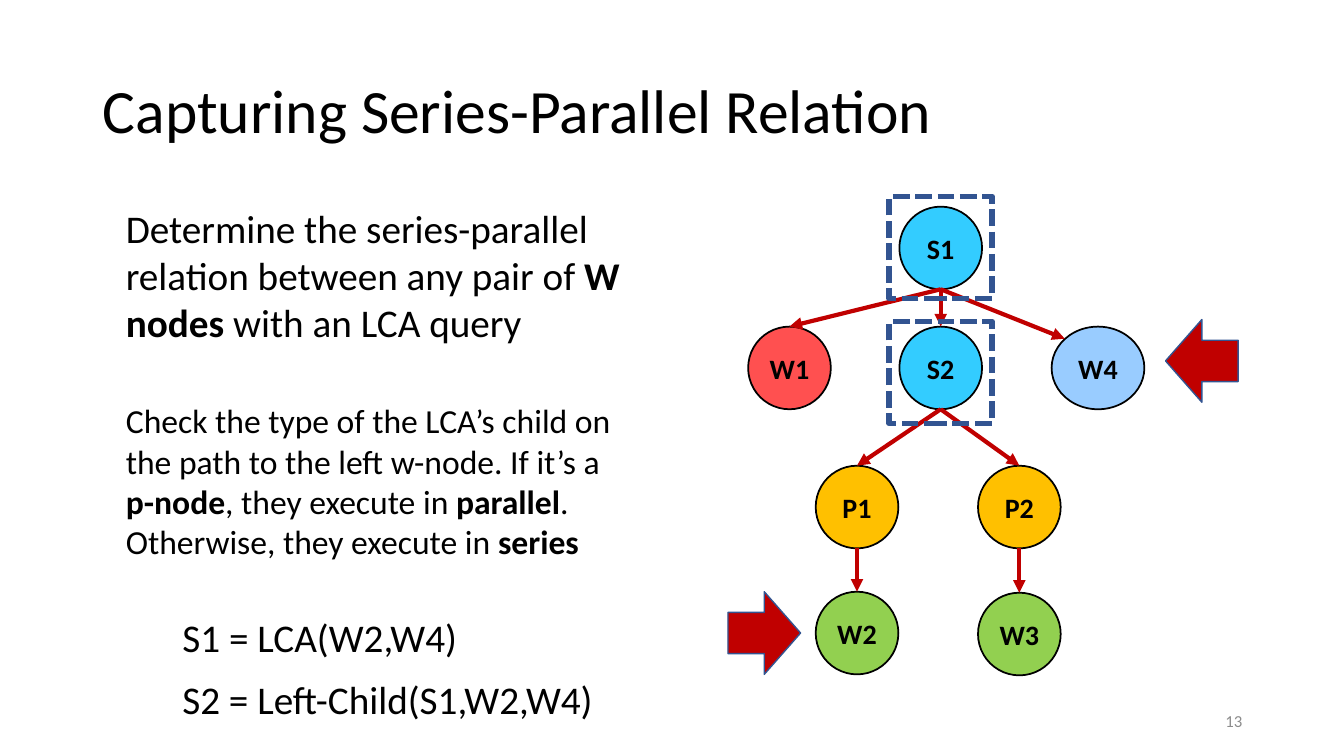
from pptx import Presentation
from pptx.dml.color import RGBColor
from pptx.enum.dml import MSO_LINE
from pptx.enum.shapes import MSO_CONNECTOR, MSO_SHAPE
from pptx.enum.text import MSO_ANCHOR, PP_ALIGN
from pptx.oxml.ns import qn
from pptx.util import Emu, Pt
from lxml.etree import SubElement

SCALE = 9144
FONT = "Calibri"
BLACK = RGBColor(0x00, 0x00, 0x00)
GRAY = RGBColor(0x8C, 0x8C, 0x8C)
RED = RGBColor(0xFF, 0x50, 0x50)
DARK_RED = RGBColor(0xC0, 0x00, 0x00)
GREEN = RGBColor(0x92, 0xD0, 0x50)
ORANGE = RGBColor(0xFF, 0xC0, 0x00)
CYAN = RGBColor(0x33, 0xCC, 0xFF)
PALE_BLUE = RGBColor(0x99, 0xCC, 0xFF)
NAVY = RGBColor(0x32, 0x54, 0x91)

NODE = 82
NODES = {
    "W1": (742, 324, NODE, RED),
    "W3": (970, 588, NODE, GREEN),
    "W2": (809, 587, NODE, GREEN),
    "W4": (1043, 324, 92, PALE_BLUE),
    "P1": (809, 462, NODE, ORANGE),
    "S1": (892, 205, NODE, CYAN),
    "P2": (970, 462, NODE, ORANGE),
    "S2": (892, 324, NODE, CYAN),
}
EDGES = [("P1", "W2"), ("P2", "W3"), ("S2", "P1"), ("S2", "P2"),
         ("S1", "W1"), ("S1", "S2")]
W4_UPPER_LEFT = (1056, 336)


def px(*values):
    return [Emu(v * SCALE) for v in values]


def style(p, size, color=BLACK, bold=None, align=PP_ALIGN.LEFT):
    p.alignment = align
    f = p.font
    f.name, f.size, f.bold = FONT, Pt(size), bold
    f.color.rgb = color


def add_title(s, text):
    title = s.shapes.title
    title.left, title.top, title.width, title.height = px(92, 40, 1150, 145)
    tf = title.text_frame
    tf.text = text
    tf.vertical_anchor = MSO_ANCHOR.MIDDLE
    p = tf.paragraphs[0]
    p.line_spacing = 0.9
    style(p, 44)


def add_text(s, box, paragraphs, size, color=BLACK, align=PP_ALIGN.LEFT,
             anchor=MSO_ANCHOR.TOP):
    tf = s.shapes.add_textbox(*px(*box)).text_frame
    tf.word_wrap = True
    tf.vertical_anchor = anchor
    for i, runs in enumerate(paragraphs):
        p = tf.add_paragraph() if i else tf.paragraphs[0]
        style(p, size, color, align=align)
        for text, bold in runs:
            r = p.add_run()
            r.text = text
            if bold:
                r.font.bold = True


def add_shape(s, kind, box, fill, line, width):
    sp = s.shapes.add_shape(kind, *px(*box))
    sp.shadow.inherit = False
    if fill is None:
        sp.fill.background()
    else:
        sp.fill.solid()
        sp.fill.fore_color.rgb = fill
    sp.line.color.rgb = line
    sp.line.width = Pt(width)
    return sp


def add_node(s, name):
    left, top, width, fill = NODES[name]
    sp = add_shape(s, MSO_SHAPE.OVAL, (left, top, width, NODE), fill, BLACK, 1.25)
    tf = sp.text_frame
    tf.word_wrap = False
    tf.vertical_anchor = MSO_ANCHOR.MIDDLE
    tf.margin_left, tf.margin_top, tf.margin_right, tf.margin_bottom = px(8, 4, 8, 4)
    p = tf.paragraphs[0]
    p.text = name
    style(p, 20, bold=True, align=PP_ALIGN.CENTER)


def top_of(name):
    left, top, width, _ = NODES[name]
    return left + width // 2, top


def bottom_of(name):
    x, top = top_of(name)
    return x, top + NODE


def add_edge(s, start, end):
    c = s.shapes.add_connector(MSO_CONNECTOR.STRAIGHT, *px(*start, *end))
    c.line.color.rgb = DARK_RED
    c.line.width = Pt(3)
    SubElement(c.line._get_or_add_ln(), qn("a:tailEnd"), type="triangle")
    SubElement(c._element.spPr, qn("a:effectLst"))


def add_pointer(s, left, top, rotation=0):
    sp = add_shape(s, MSO_SHAPE.RIGHT_ARROW, (left, top, 72, 82), DARK_RED, NAVY, 1)
    sp.rotation = rotation


def add_highlight(s, name):
    left, top, _, _ = NODES[name]
    box = (left - 10, top - 10 if name == "S1" else top - 5, 102, 101)
    sp = add_shape(s, MSO_SHAPE.RECTANGLE, box, None, NAVY, 4)
    sp.line.dash_style = MSO_LINE.SQUARE_DOT


def main():
    prs = Presentation()
    prs.slide_width, prs.slide_height = px(1333, 750)
    s = prs.slides.add_slide(prs.slide_layouts[5])
    add_title(s, "Capturing Series-Parallel Relation")
    add_text(s, (942, 695, 300, 40), [[("13", False)]], 12, GRAY,
             PP_ALIGN.RIGHT, MSO_ANCHOR.MIDDLE)
    for name in NODES:
        add_node(s, name)
    for parent, child in EDGES:
        add_edge(s, bottom_of(parent), top_of(child))
    add_edge(s, bottom_of("S1"), W4_UPPER_LEFT)
    add_pointer(s, 722, 587)
    add_pointer(s, 1156, 317, 180)
    for name in ("S1", "S2"):
        add_highlight(s, name)
    add_text(s, (171, 604, 301, 57), [[("S1 = LCA(W2,W4)", False)]], 28)
    add_text(s, (171, 665, 440, 57), [[("S2 = Left-Child(S1,W2,W4)", False)]], 28)
    add_text(s, (115, 198, 531, 151), [[
        ("Determine the series-parallel relation between any pair of ", False),
        ("W nodes ", True),
        ("with an LCA query", False),
    ]], 28)
    add_text(s, (115, 392, 537, 172), [
        [("Check the type of the LCA’s child on the path to the left w-node. "
          "If it’s a", False)],
        [("p-node", True), (", they execute in ", False), ("parallel", True),
         (". Otherwise, they execute in ", False), ("series", True)],
    ], 24)
    prs.save("out.pptx")


if __name__ == "__main__":
    main()
